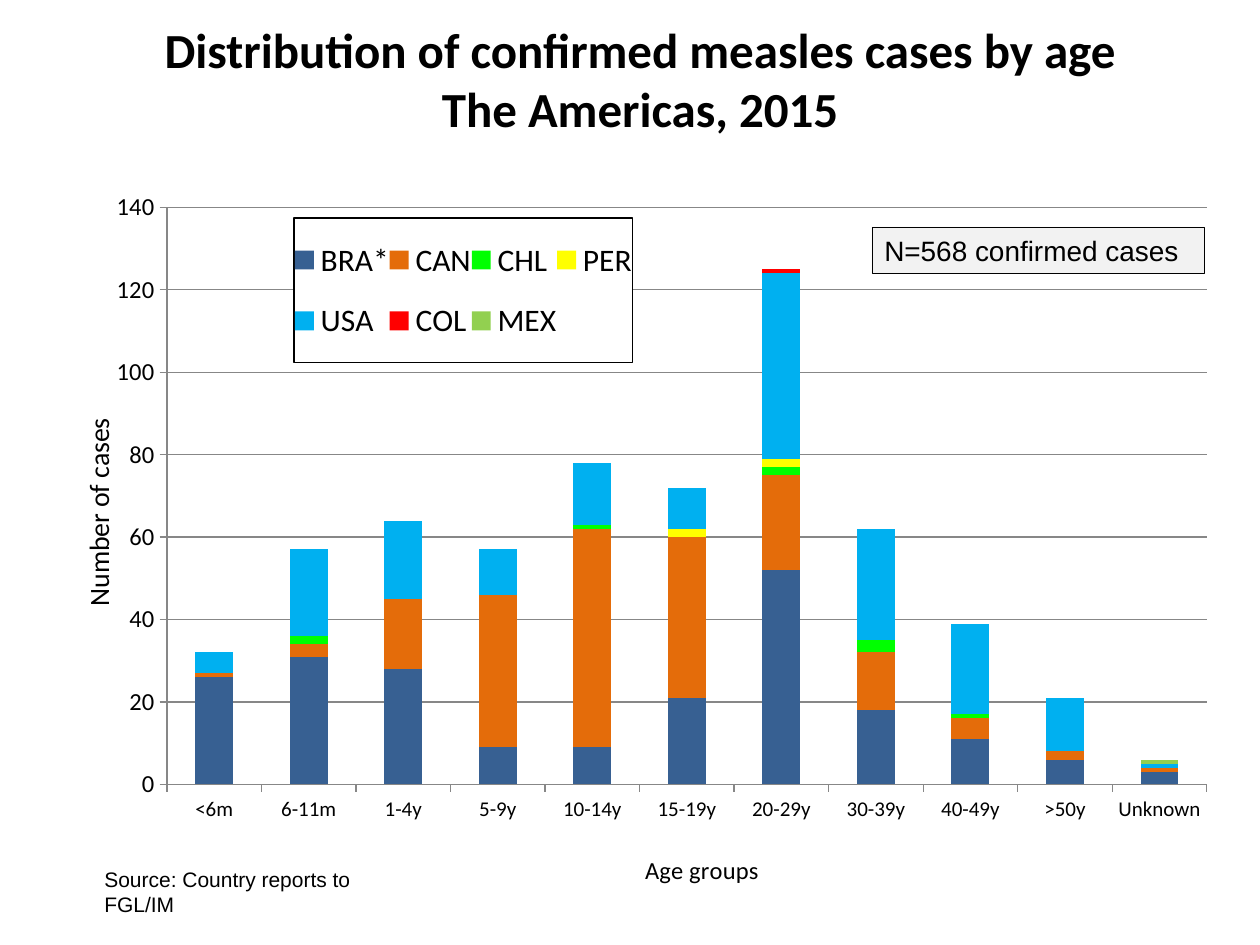
from typing import NamedTuple

from lxml import etree
from pptx import Presentation
from pptx.chart.data import CategoryChartData
from pptx.dml.color import RGBColor
from pptx.enum import chart as ch, shapes, text
from pptx.oxml import parse_xml
from pptx.oxml.ns import nsdecls, qn
from pptx.util import Inches, Pt

BLACK = RGBColor(0, 0, 0)
PALE = RGBColor(0xF2, 0xF2, 0xF2)
GRAY = RGBColor(0x87, 0x87, 0x87)
NAVY = RGBColor(0x37, 0x60, 0x92)
ORANGE = RGBColor(0xE4, 0x6C, 0x0A)
GREEN = RGBColor(0x00, 0xFF, 0x00)
YELLOW = RGBColor(0xFF, 0xFF, 0x00)
BLUE = RGBColor(0x00, 0xB0, 0xF0)
RED = RGBColor(0xFF, 0x00, 0x00)
LIME = RGBColor(0x92, 0xD0, 0x50)


class Box(NamedTuple):
    left: float
    top: float
    width: float
    height: float

    def inches(self) -> list:
        return [Inches(v) for v in self]


class Land(NamedTuple):
    name: str
    color: RGBColor
    cases: dict


AGES = ["<6m", "6-11m", "1-4y", "5-9y", "10-14y", "15-19y", "20-29y",
        "30-39y", "40-49y", ">50y", "Unknown"]


def full(*cases: int) -> dict:
    return dict(zip(AGES, cases))


LANDS = [
    Land("BRA*", NAVY, full(26, 31, 28, 9, 9, 21, 52, 18, 11, 6, 3)),
    Land("CAN", ORANGE, full(1, 3, 17, 37, 53, 39, 23, 14, 5, 2, 1)),
    Land("CHL", GREEN, {"6-11m": 2, "10-14y": 1, "20-29y": 2,
                        "30-39y": 3, "40-49y": 1}),
    Land("PER", YELLOW, {"15-19y": 2, "20-29y": 2}),
    Land("USA", BLUE, full(5, 21, 19, 11, 15, 10, 45, 27, 22, 13, 1)),
    Land("COL", RED, {"20-29y": 1}),
    Land("MEX", LIME, {"Unknown": 1}),
]


def style(font, size: float, name: str = "Calibri", bold: bool = False) -> None:
    font.size, font.name, font.bold = Pt(size), name, bold
    font.color.rgb = BLACK


def write(shape, lines: list[str], size: float, name: str,
          bold: bool = False) -> None:
    """Fill a shape with one paragraph, its lines parted by breaks."""
    frame = shape.text_frame
    frame.word_wrap = True
    para = frame.paragraphs[0]
    para.alignment = text.PP_ALIGN.CENTER if bold else text.PP_ALIGN.LEFT
    for i, line in enumerate(lines):
        if i:
            para.add_line_break()
        run = para.add_run()
        run.text = line
        style(run.font, size, name, bold)


def place(part, after: str | None, inner: bool = False, **spots: float) -> None:
    """Give a chart part a manual layout, as fractions of the chart."""
    for old in part.findall(qn("c:layout")):
        part.remove(old)
    layout = parse_xml(f"<c:layout {nsdecls('c')}><c:manualLayout/></c:layout>")
    rules = {"layoutTarget": "inner"} if inner else {}
    rules |= {"xMode": "edge", "yMode": "edge"} | spots
    for tag, val in rules.items():
        etree.SubElement(layout[0], qn(f"c:{tag}")).set("val", str(val))
    if after:
        part.find(qn(after)).addnext(layout)
    else:
        part.insert(0, layout)


def set_axis(axis, title: str, size: float, ticks: float,
             x: float, y: float) -> None:
    axis.major_tick_mark = ch.XL_TICK_MARK.OUTSIDE
    axis.minor_tick_mark = ch.XL_TICK_MARK.NONE
    axis.format.line.color.rgb = GRAY
    style(axis.tick_labels.font, ticks)
    run = axis.axis_title.text_frame.paragraphs[0].add_run()
    run.text = title
    style(run.font, size)
    place(axis.axis_title._element, "c:tx", x=x, y=y)


def set_legend(chart) -> None:
    chart.has_legend = True
    legend = chart.legend
    legend.position = ch.XL_LEGEND_POSITION.BOTTOM
    legend.include_in_layout = False
    style(legend.font, 18)
    part = legend._element
    place(part, "c:legendPos", x=0.2, y=0.055, w=0.293, h=0.203)
    part.find(qn("c:txPr")).addprevious(parse_xml(
        f"<c:spPr {nsdecls('c', 'a')}><a:solidFill><a:srgbClr val='FFFFFF'/>"
        "</a:solidFill><a:ln w='9525'><a:solidFill><a:srgbClr val='000000'/>"
        "</a:solidFill></a:ln></c:spPr>"))


def add_cases(slide, box: Box) -> None:
    data = CategoryChartData()
    data.categories = AGES
    for land in LANDS:
        data.add_series(land.name, [land.cases.get(age) for age in AGES])
    chart = slide.shapes.add_chart(
        ch.XL_CHART_TYPE.COLUMN_STACKED, *box.inches(), data).chart
    chart.has_title = False
    style(chart.font, 18)
    plot = chart.plots[0]
    plot.gap_width, plot.overlap = 150, 100
    plot.vary_by_categories = False
    for bar, land in zip(plot.series, LANDS):
        bar.format.fill.solid()
        bar.format.fill.fore_color.rgb = land.color
    set_axis(chart.category_axis, "Age groups", 14, 12, 0.5, 0.94)
    values = chart.value_axis
    set_axis(values, "Number of cases", 16, 14, 0.01, 0.33)
    values.axis_title.text_frame._txBody.bodyPr.set("rot", "-5400000")
    values.minimum_scale, values.maximum_scale, values.major_unit = 0, 140, 20
    values.major_gridlines.format.line.color.rgb = GRAY
    set_legend(chart)
    area = chart._chartSpace.chart.plotArea
    place(area, None, True, x=0.09, y=0.04, w=0.9, h=0.81)


def main() -> None:
    deck = Presentation()
    deck.slide_width, deck.slide_height = Inches(10), Inches(7.5)
    slide = deck.slides.add_slide(deck.slide_layouts[6])

    title = slide.shapes.add_textbox(*Box(0.58, 0, 9, 1.25).inches())
    title.text_frame.vertical_anchor = text.MSO_ANCHOR.MIDDLE
    write(title, ["Distribution of confirmed measles cases by age",
                  "The Americas, 2015"], 28, "Calibri", True)

    add_cases(slide, Box(0.5, 1.42, 9.17, 5.67))

    source = slide.shapes.add_textbox(*Box(0.73, 6.83, 2.55, 0.3).inches())
    write(source, ["Source: Country reports to FGL/IM"], 12, "Arial")

    total = slide.shapes.add_shape(shapes.MSO_SHAPE.RECTANGLE,
                                   *Box(6.92, 1.8, 2.64, 0.37).inches())
    total.shadow.inherit = False
    total.fill.solid()
    total.fill.fore_color.rgb = PALE
    total.line.color.rgb = BLACK
    total.line.width = Pt(0.25)
    write(total, ["N=568 confirmed cases"], 16, "Arial")

    deck.save("out.pptx")


if __name__ == "__main__":
    main()
